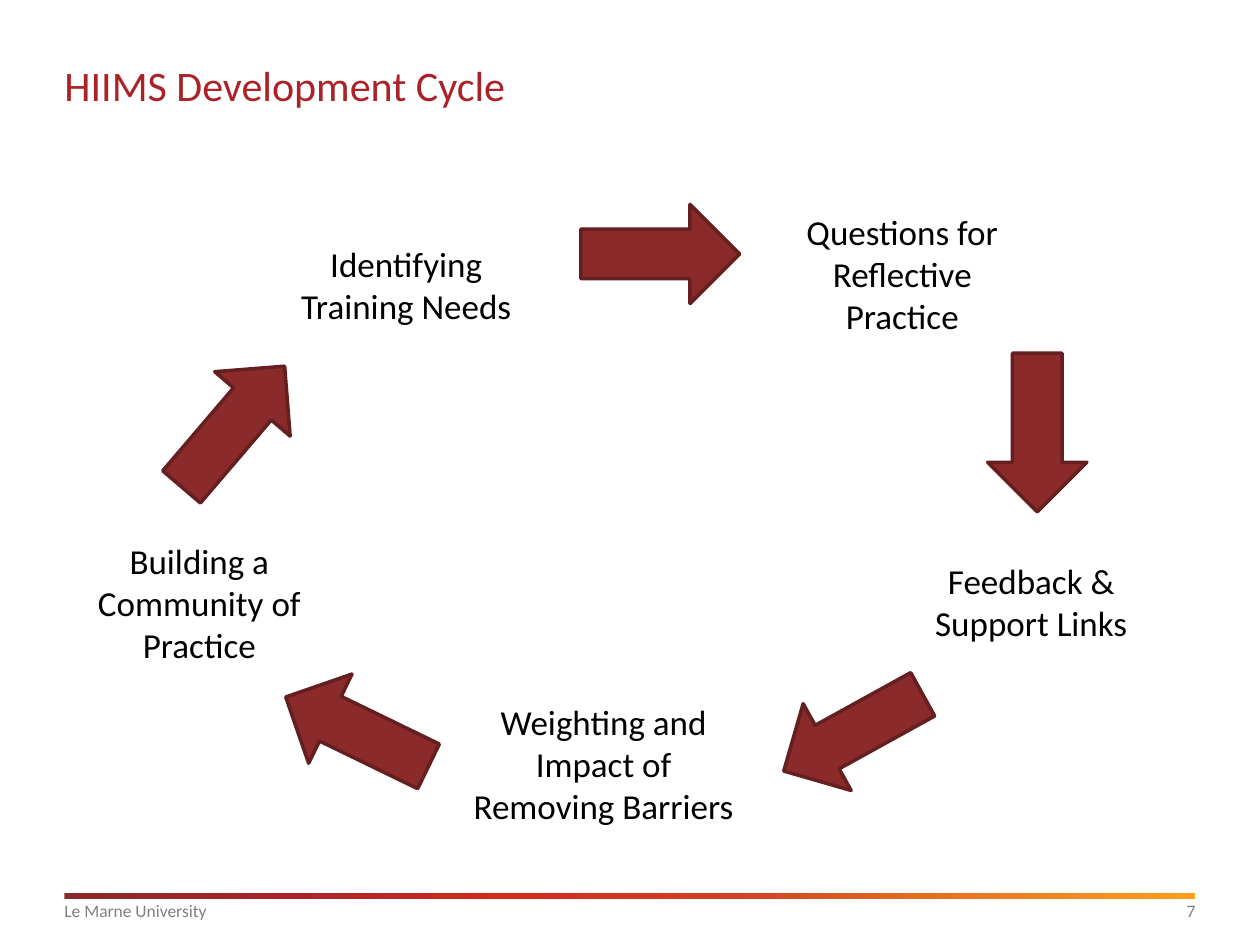
import dataclasses

import lxml.etree
import pptx
import pptx.dml.color
import pptx.enum.shapes
import pptx.enum.text
import pptx.oxml.ns
import pptx.slide
import pptx.util

Cm = pptx.util.Cm
ALIGN = pptx.enum.text.PP_ALIGN
SHAPE = pptx.enum.shapes.MSO_SHAPE


def rgb(value):
    return pptx.dml.color.RGBColor.from_string(value)


@dataclasses.dataclass(frozen=True)
class Theme:
    font: str = "Calibri"
    title_size: int = 24
    label_size: int = 20
    footer_size: int = 10
    title: str = "AB2328"
    label: str = "000000"
    footer: str = "808080"
    number: str = "7F7F7F"
    arrow: str = "8A2A2B"
    outline: str = "661F20"
    bar: tuple = ("8A2A2B", "AB2328", "D52B1E", "D14124", "E87722", "FF9E1B")


@dataclasses.dataclass
class Deck:
    theme: Theme
    s: pptx.slide.Slide

    def set_text(self, tf, text, size, color, align):
        tf.word_wrap = True
        tf.vertical_anchor = pptx.enum.text.MSO_ANCHOR.TOP
        p = tf.paragraphs[0]
        p.text = text
        p.alignment = align
        p.font.name = self.theme.font
        p.font.size = pptx.util.Pt(size)
        p.font.color.rgb = rgb(color)
        return p

    def margins(self, tf, top=0):
        tf.margin_left = tf.margin_right = tf.margin_bottom = 0
        tf.margin_top = Cm(top)

    def title(self, text, x, y, w, h):
        sp = self.s.shapes.title
        sp.left, sp.top, sp.width, sp.height = Cm(x), Cm(y), Cm(w), Cm(h)
        self.margins(sp.text_frame)
        self.set_text(sp.text_frame, text, self.theme.title_size,
                      self.theme.title, ALIGN.LEFT)

    def label(self, text, x, y, w, h):
        sp = self.s.shapes.add_textbox(Cm(x), Cm(y), Cm(w), Cm(h))
        self.set_text(sp.text_frame, text, self.theme.label_size,
                      self.theme.label, ALIGN.CENTER)

    def footer(self, text, x, y, w, h, color, align, space=0):
        sp = self.s.shapes.add_textbox(Cm(x), Cm(y), Cm(w), Cm(h))
        self.margins(sp.text_frame, 0.15)
        p = self.set_text(sp.text_frame, text, self.theme.footer_size,
                          color, align)
        p.space_before = p.space_after = pptx.util.Pt(space)

    def arrow(self, x, y, angle):
        sp = self.s.shapes.add_shape(
            SHAPE.RIGHT_ARROW, Cm(x), Cm(y), Cm(3.2), Cm(2))
        sp.rotation = angle
        sp.shadow.inherit = False
        sp.fill.solid()
        sp.fill.fore_color.rgb = rgb(self.theme.arrow)
        sp.line.color.rgb = rgb(self.theme.outline)
        sp.line.width = pptx.util.Pt(2)

    def bar(self, x, y, w, h):
        sp = self.s.shapes.add_shape(SHAPE.RECTANGLE, Cm(x), Cm(y), Cm(w), Cm(h))
        sp.shadow.inherit = False
        sp.line.fill.background()
        sp.fill.gradient()
        sp.fill.gradient_angle = 0
        qn = pptx.oxml.ns.qn
        stops = sp.element.spPr.find(".//" + qn("a:gsLst"))
        for stop in list(stops):
            stops.remove(stop)
        step = 100000 // (len(self.theme.bar) - 1)
        for i, color in enumerate(self.theme.bar):
            stop = lxml.etree.SubElement(stops, qn("a:gs"), pos=str(i * step))
            lxml.etree.SubElement(stop, qn("a:srgbClr"), val=color)


def main():
    prs = pptx.Presentation()
    prs.slide_width, prs.slide_height = Cm(25.4), Cm(19.05)
    theme = Theme()
    deck = Deck(theme, prs.slides.add_slide(prs.slide_layouts[5]))

    left, width, foot = 1.3, 22.8, 18
    deck.bar(left, foot, width, 0.13)
    deck.footer("7", 21.9, foot, 2.2, 1, theme.number, ALIGN.RIGHT)
    deck.footer("Le Marne University", left, foot, 20.5, 1,
                theme.footer, ALIGN.LEFT, 6)
    deck.title("HIIMS Development Cycle", left, 1.2, width, 2.33)

    for x, y, angle in (
        (11.71, 4.12, 0),
        (19.31, 7.72, 90),
        (15.6, 13.77, 151.1),
        (5.6, 13.75, 205.9),
        (3.1, 7.6, 310.5),
    ):
        deck.arrow(x, y, angle)

    for text, x, y, w, h in (
        ("Building a Community of Practice", 1.53, 10.75, 4.98, 2.82),
        ("Questions for Reflective Practice", 15.7, 4.12, 4.98, 2.82),
        ("Weighting and Impact of Removing Barriers", 9.17, 14, 6, 2.82),
        ("Feedback & Support Links", 18.3, 11.16, 4.98, 1.96),
        ("Identifying Training Needs", 5.7, 4.76, 4.98, 1.96),
    ):
        deck.label(text, x, y, w, h)

    prs.save("out.pptx")


if __name__ == "__main__":
    main()
